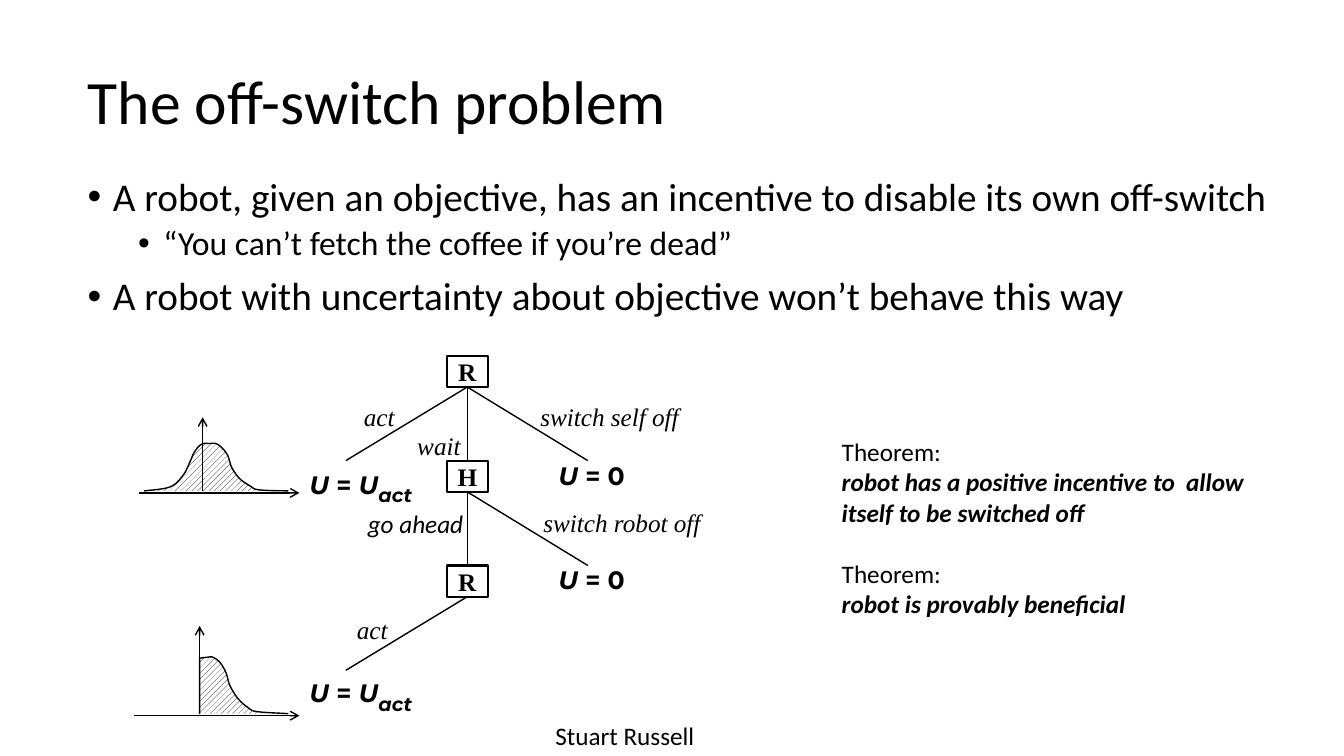
import lxml.etree
import pptx
import pptx.dml.color
import pptx.enum.dml
import pptx.enum.shapes
import pptx.enum.text
import pptx.oxml.ns
import pptx.util

PX = 9144  # EMU per px, 100 px to the inch
BLACK, WHITE = "000000", "FFFFFF"
SERIF = {"name": "Times New Roman", "italic": True}
SANS = {"name": "Calibri"}
FORMULA = {"name": "Montserrat", "bold": True}
ANCHOR = pptx.enum.text.MSO_ANCHOR
FIT = pptx.enum.text.MSO_AUTO_SIZE


def px(*lengths):
    return [round(length * PX) for length in lengths]


def rgb(hex_colour):
    return pptx.dml.color.RGBColor.from_string(hex_colour)


def child(parent, tag, **attributes):
    return lxml.etree.SubElement(parent, pptx.oxml.ns.qn(tag), **attributes)


def style(font, size=18, **values):
    for key, value in {"size": pptx.util.Pt(size), **values}.items():
        setattr(font, key, value)
    font.color.rgb = rgb(BLACK)


def outline(shape, width):
    shape.line.color.rgb = rgb(BLACK)
    shape.line.width = pptx.util.Pt(width)


def place(shape, *box):
    for key, length in zip(("left", "top", "width", "height"), px(*box)):
        setattr(shape, key, length)


def text_box(slide, *box, wrap=False):
    frame = slide.shapes.add_textbox(*px(*box)).text_frame
    frame.word_wrap = wrap
    frame.auto_size = FIT.SHAPE_TO_FIT_TEXT
    return frame


def label(slide, text, *box, **font):
    run = text_box(slide, *box).paragraphs[0].add_run()
    run.text = text
    style(run.font, **font)


def line(slide, start, end, begin_node=None, end_node=None, arrow=False):
    connector = slide.shapes.add_connector(
        pptx.enum.shapes.MSO_CONNECTOR.STRAIGHT, *px(*start, *end))
    if begin_node is not None:
        connector.begin_connect(begin_node, 2)
    if end_node is not None:
        connector.end_connect(end_node, 0)
    outline(connector, 1)
    if arrow:
        child(connector.line._get_or_add_ln(), "a:tailEnd", type="arrow")
    child(connector._element.spPr, "a:effectLst")


# Title and bullets
def heading(slide, *box):
    title = slide.shapes.title
    place(title, *box)
    title.text_frame.text = "The off-switch problem"
    title.text_frame.vertical_anchor = ANCHOR.MIDDLE
    paragraph = title.text_frame.paragraphs[0]
    paragraph.alignment = pptx.enum.text.PP_ALIGN.LEFT
    paragraph.line_spacing = 0.9
    style(paragraph.runs[0].font, 44, **SANS)


def bullets(slide, *box):
    body = slide.placeholders[1]
    place(body, *box)
    frame = body.text_frame
    frame.auto_size = FIT.NONE
    points = [
        (0, "A robot, given an objective, has an incentive to disable its own off-switch"),
        (1, "“You can’t fetch the coffee if you’re dead”"),
        (0, "A robot with uncertainty about objective won’t behave this way"),
    ]
    levels = [(25, 10, 28), (75, 5, 24)]  # indent, space before, text size
    for index, (level, text) in enumerate(points):
        indent, before, size = levels[level]
        paragraph = frame.add_paragraph() if index else frame.paragraphs[0]
        paragraph.text = text
        paragraph.level = level
        paragraph.line_spacing = 0.9
        paragraph.space_before = pptx.util.Pt(before)
        style(paragraph.runs[0].font, size, **SANS)
        properties = paragraph._p.get_or_add_pPr()
        properties.set("marL", str(indent * PX))
        properties.set("indent", str(-25 * PX))
        child(properties, "a:buFont", typeface="Arial")
        child(properties, "a:buChar", char="•")


# Decision tree
def node(slide, text, *box):
    rect = slide.shapes.add_shape(pptx.enum.shapes.MSO_SHAPE.RECTANGLE, *px(*box))
    rect.shadow.inherit = False
    rect.fill.solid()
    rect.fill.fore_color.rgb = rgb(WHITE)
    outline(rect, 1.5)
    frame = rect.text_frame
    for side in ("left", "top", "right", "bottom"):
        setattr(frame, "margin_" + side, 0)
    frame.word_wrap = False
    frame.vertical_anchor = ANCHOR.MIDDLE
    frame.text = text
    frame.paragraphs[0].alignment = pptx.enum.text.PP_ALIGN.CENTER
    style(frame.paragraphs[0].runs[0].font, name="Times New Roman", bold=True)
    return rect


def utility(slide, value, subscript, *box):
    paragraph = text_box(slide, *box).paragraphs[0]
    parts = [("U", True), (" = ", False), (value, bool(subscript))]
    for text, italic in parts:
        run = paragraph.add_run()
        run.text = text
        style(run.font, italic=italic, **FORMULA)
    if subscript:
        run = paragraph.add_run()
        run.text = subscript
        style(run.font, 24, italic=True, **FORMULA)
        run._r.get_or_add_rPr().set("baseline", "-25000")


def decision_tree(slide, left, top):
    step, height, spread, drop = 104, 31, 120, 73
    middle = left + 166
    robot, human, robot_again = nodes = [
        node(slide, text, left + 146, top + row * step, 41, height)
        for row, text in enumerate("RHR")]

    branches = [(0, -1, None), (0, 0, human), (0, 1, None),
                (1, 0, robot_again), (1, 1, None), (2, -1, None)]
    for row, side, target in branches:
        foot = top + row * step + height
        line(slide, (middle, foot), (middle + side * spread, foot + drop),
             nodes[row], target)

    actions = [
        ("act", 54, 40, 51, SERIF), ("wait", 107, 69, 66, SERIF),
        ("switch self off", 229, 40, 159, SERIF),
        ("go ahead", 58, 146, 117, {**SANS, "italic": True}),
        ("switch robot off", 232, 145, 178, SERIF), ("act", 47, 252, 51, SERIF),
    ]
    for text, x, y, width, font in actions:
        label(slide, text, left + x, top + y, width, 40, **font)

    outcomes = [("U", "act", 0, 99, 135), ("U", "act", 0, 306, 135),
                ("0", "", 247, 99, 91), ("0", "", 247, 202, 91)]
    for value, subscript, x, y, width in outcomes:
        utility(slide, value, subscript, left + x, top + y, width, 40)


# Density plots
def smooth(points, steps=5):
    padded = [points[0], *points, points[-1]]
    curve = [points[0]]
    for a, b, c, d in zip(padded, padded[1:], padded[2:], padded[3:]):
        for t in (k / steps for k in range(1, steps + 1)):
            curve.append(tuple(
                (2 * q + (r - p) * t + (2 * p - 5 * q + 4 * r - s) * t ** 2
                 + (3 * q - p - 3 * r + s) * t ** 3) / 2
                for p, q, r, s in zip(a, b, c, d)))
    return curve


def density_plot(slide, left, top, width, height, axis, curve):
    base = top + height
    line(slide, (left, base), (left + width, base), arrow=True)
    start, *rest = [px(left + x, base - y) for x, y in curve]
    builder = slide.shapes.build_freeform(*start)
    builder.add_line_segments(rest, close=False)
    density = builder.convert_to_shape()
    density.shadow.inherit = False
    density.fill.patterned()
    density.fill.pattern = pptx.enum.dml.MSO_PATTERN.WIDE_UPWARD_DIAGONAL
    density.fill.fore_color.rgb = rgb(BLACK)
    density.fill.back_color.rgb = rgb(WHITE)
    outline(density, 1)
    line(slide, (left + axis, base - 2), (left + axis, top), arrow=True)


# Theorems
def theorems(slide, *box):
    frame = text_box(slide, *box, wrap=True)
    claims = ["robot has a positive incentive to  allow \vitself to be switched off",
              "robot is provably beneficial"]
    for index, claim in enumerate(claims):
        intro = frame.add_paragraph() if index else frame.paragraphs[0]
        intro.space_before = pptx.util.Pt(22 * index)
        for paragraph, text, strong in ((intro, "Theorem:", False),
                                        (None, claim, True)):
            paragraph = paragraph or frame.add_paragraph()
            paragraph.text = text
            paragraph._p.get_or_add_pPr().set("marL", str(50 * PX))
            for run in paragraph.runs:
                style(run.font, bold=strong, italic=strong, **SANS)


def main():
    deck = pptx.Presentation()
    deck.slide_width, deck.slide_height = px(1333, 750)
    slide = deck.slides.add_slide(deck.slide_layouts[1])
    heading(slide, 77, 54, 825, 100)
    bullets(slide, 77, 171, 1244, 475)
    label(slide, "Stuart Russell", 541, 710, 165, 40, **SANS)
    decision_tree(slide, 297, 353)

    bell = [(5, 2), (31, 6), (44, 18), (51, 32), (54, 39), (59, 46), (64, 49),
            (70, 49), (76, 49), (82, 45), (88, 37), (92, 25), (100, 14),
            (110, 7), (119, 3), (148, 2)]
    half_bell = [(65, 57), (73, 58), (78, 58), (85, 53), (91, 43), (95, 30),
                 (103, 17), (113, 8), (122, 4), (153, 2)]
    density_plot(slide, 138, 414, 159, 75, 63, smooth(bell))
    density_plot(slide, 133, 621, 164, 89, 65, [(65, 2), *smooth(half_bell)])
    theorems(slide, 775, 428, 545, 192)
    deck.save("out.pptx")


if __name__ == "__main__":
    main()
